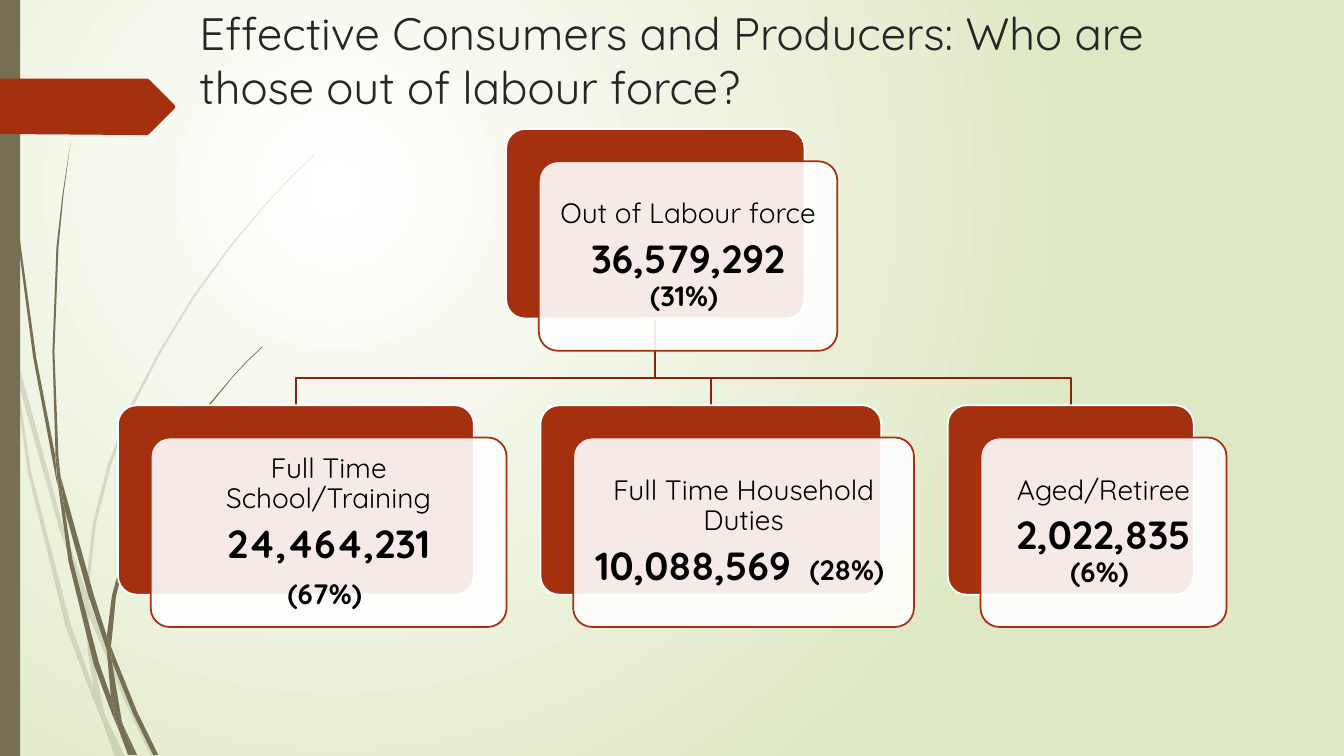
from lxml import etree
from pptx import Presentation, util as u
from pptx.dml.color import RGBColor
from pptx.enum import shapes, text
from pptx.oxml import ns

FONT = "Quicksand"
RUST, OLIVE, WHITE, BLACK = "A53010", "766F54", "FFFFFF", "000000"
CARD_HEIGHT, SHIFT_X, SHIFT_Y = 1.88, 0.325, 0.32
ROOT_TOP, BRANCH_TOP, RAIL = 1.28, 4.02, 3.75

FAINT_GRASS = [
    [(0.11, 3.5), (0.09, 3.22), (0, 2.82), (0, 2.99), (0.1, 3.44)],
    [(0.58, 5.22), (0.84, 5.99), (0.85, 5.86), (0.62, 5.2), (0.14, 3.45), (0.17, 3.76)],
    [(0.92, 6.07), (0.88, 5.96), (0.88, 6.1), (1.23, 6.94), (1.5, 7.51), (1.55, 7.51),
     (1.27, 6.92)],
    [(1.19, 7.51), (1.24, 7.51), (1.05, 7.11)],
    [(0.93, 6.83), (0.7, 6.19), (0.31, 4.69), (0.17, 3.76), (0.11, 3.5), (0.28, 4.7),
     (0.65, 6.21), (0.92, 6.93), (1.01, 7.14), (0.99, 7.07)],
    [(0.84, 5.99), (0.87, 6.46), (0.93, 6.83), (0.96, 6.92), (1.05, 7.11), (1.03, 7.06),
     (0.91, 6.46), (0.88, 6.1), (0.88, 6.08)],
    [(0.88, 5.84), (0.95, 5.2), (1.1, 4.62), (1.32, 4.04), (1.6, 3.49), (1.93, 2.95),
     (2.29, 2.45), (2.68, 1.98), (2.9, 1.75), (3.12, 1.54), (3.12, 1.53), (2.89, 1.75),
     (2.68, 1.97), (2.28, 2.44), (1.91, 2.94), (1.58, 3.48), (1.29, 4.03), (1.07, 4.61),
     (0.92, 5.2), (0.85, 5.84), (0.85, 5.86), (0.88, 5.96)],
    [(1.01, 7.14), (1.14, 7.51), (1.19, 7.51)],
    [(0.88, 6.08), (0.88, 6.1), (0.88, 5.96), (0.85, 5.86), (0.84, 5.99)],
    [(0.96, 6.92), (0.93, 6.83), (0.99, 7.07), (1.01, 7.14), (1.19, 7.51), (1.05, 7.11)],
]
SOLID_GRASS = [
    [(0.07, 1.1), (0.17, 2.33), (0.33, 3.55), (0.56, 4.77), (0.57, 4.81), (0.55, 4.57),
     (0.55, 4.53), (0.36, 3.55), (0.19, 2.32), (0.08, 1.09), (0.05, 0.48), (0.04, 0),
     (0.03, 0), (0.04, 0.48)],
    [(0.88, 5.92), (1.06, 6.45), (1.06, 6.33), (1.06, 6.31), (0.93, 5.9), (0.6, 4.72),
     (0.64, 5.05)],
    [(1.13, 6.49), (1.1, 6.41), (1.11, 6.56), (1.32, 7.08), (1.52, 7.49), (1.57, 7.49),
     (1.36, 7.06)],
    [(1.1, 6.91), (0.98, 6.57), (0.72, 5.56), (0.64, 5.05), (0.57, 4.77), (0.68, 5.57),
     (0.93, 6.59), (1.11, 7.08), (1.17, 7.22), (1.16, 7.17)],
    [(0.6, 4.72), (0.58, 4.53), (0.54, 3.49), (0.58, 2.45), (0.63, 1.93), (0.7, 1.41),
     (0.62, 1.93), (0.56, 2.45), (0.52, 3.49), (0.55, 4.49)],
    [(1.33, 7.49), (1.36, 7.49), (1.22, 7.19)],
    [(0.57, 4.77), (0.64, 5.05), (0.6, 4.72), (0.55, 4.49), (0.55, 4.53)],
    [(1.11, 6.33), (1.15, 5.92), (1.25, 5.52), (1.58, 4.76), (2.05, 4.06), (2.31, 3.74),
     (2.45, 3.59), (2.61, 3.44), (2.6, 3.44), (2.45, 3.58), (2.31, 3.73), (2.04, 4.05),
     (1.56, 4.74), (1.22, 5.51), (1.11, 5.91), (1.06, 6.31), (1.1, 6.41)],
    [(1.17, 7.22), (1.27, 7.49), (1.31, 7.49)],
    [(1.06, 6.45), (1.1, 6.91), (1.16, 7.06), (1.22, 7.19), (1.21, 7.16), (1.11, 6.56),
     (1.09, 6.51)],
    [(1.06, 6.45), (1.09, 6.51), (1.11, 6.56), (1.1, 6.41), (1.06, 6.31), (1.06, 6.33)],
    [(1.16, 7.06), (1.1, 6.91), (1.16, 7.17), (1.17, 7.22), (1.3, 7.49), (1.33, 7.49),
     (1.22, 7.19)],
]
ARROW = [(0, 0.78), (1.46, 0.78), (1.48, 0.79), (1.73, 1.04), (1.74, 1.06),
         (1.73, 1.08), (1.48, 1.33), (1.46, 1.34), (1.36, 1.34), (0, 1.33)]

ROOT = (5.02, 2.96, [[("Out of Labour force", 20, False)],
                     [("36,579,292 ", 28, True), ("(31%) ", 20, True)]])
BRANCHES = [
    (1.17, 3.53, [[("Full Time School/Training", 20, False)],
                  [("24,464,231", 28, True)], [("(67%) ", 20, True)]]),
    (5.36, 3.38, [[("Full Time Household Duties", 20, False)],
                  [("10,088,569 ", 28, True), (" (28%) ", 20, True)]]),
    (9.4, 2.44, [[("Aged/Retiree", 20, False)],
                 [("2,022,835 ", 28, True), ("(6%) ", 20, True)]]),
]


def color(value):
    return RGBColor.from_string(value)


def paint(shape, fill=None, line=None, alpha=100):
    shape.shadow.inherit = False
    if fill:
        shape.fill.solid()
        shape.fill.fore_color.rgb = color(fill)
        if alpha < 100:
            tint = shape._element.spPr.find(ns.qn("a:solidFill"))[0]
            etree.SubElement(tint, ns.qn("a:alpha"), val=str(alpha * 1000))
    else:
        shape.fill.background()
    if line:
        shape.line.color.rgb = color(line)
        shape.line.width = u.Pt(1.25)
    else:
        shape.line.fill.background()


def outline(page, points, close):
    corners = [(u.Inches(x), u.Inches(y)) for x, y in points]
    builder = page.shapes.build_freeform(*corners[0])
    builder.add_line_segments(corners[1:], close=close)
    return builder.convert_to_shape()


def add_background(page):
    fill = page.background.fill
    fill.gradient()
    for stop, value, position in zip(fill.gradient_stops, (WHITE, "DFE8C4"), (0, 1)):
        stop.color.rgb = color(value)
        stop.position = position
    gradient = next(page._element.iter(ns.qn("a:gradFill")))
    gradient.remove(gradient.find(ns.qn("a:lin")))
    focus = etree.SubElement(gradient, ns.qn("a:path"), path="circle")
    etree.SubElement(focus, ns.qn("a:fillToRect"),
                     l="50000", t="50000", r="100000", b="100000")


def add_decoration(page, height):
    for blades, alpha in ((FAINT_GRASS, 20), (SOLID_GRASS, 100)):
        for blade in blades:
            paint(outline(page, blade, True), OLIVE, alpha=alpha)
    stripe = page.shapes.add_shape(shapes.MSO_SHAPE.RECTANGLE, 0, 0, u.Inches(0.2), height)
    paint(stripe, OLIVE)
    paint(outline(page, ARROW, True), RUST)


def add_title(page, left, top, width, height):
    box = page.shapes.add_textbox(*map(u.Inches, (left, top, width, height)))
    frame = box.text_frame
    frame.word_wrap = True
    para = frame.paragraphs[0]
    para.text = "Effective Consumers and Producers: Who are those out of labour force?"
    para.font.name = FONT
    para.font.size = u.Pt(32.4)
    para.font.color.rgb = color("262626")


def add_panel(page, left, top, width):
    panel = page.shapes.add_shape(shapes.MSO_SHAPE.ROUNDED_RECTANGLE,
                                  *map(u.Inches, (left, top, width, CARD_HEIGHT)))
    panel.adjustments[0] = 0.1
    return panel


def add_card(page, left, top, width, lines):
    paint(add_panel(page, left, top, width), RUST, WHITE)
    card = add_panel(page, left + SHIFT_X, top + SHIFT_Y, width)
    paint(card, WHITE, RUST, alpha=90)
    frame = card.text_frame
    frame.word_wrap = True
    frame.vertical_anchor = text.MSO_ANCHOR.MIDDLE
    frame.margin_left = frame.margin_right = u.Inches(0.08)
    frame.margin_top = frame.margin_bottom = u.Inches(0.08)
    for index, spans in enumerate(lines):
        para = frame.add_paragraph() if index else frame.paragraphs[0]
        para.alignment = text.PP_ALIGN.CENTER
        para.line_spacing = 0.9
        para.space_after = u.Pt(0.35 * spans[0][1])
        para.font.name = FONT
        para.font.color.rgb = color(BLACK)
        for words, size, bold in spans:
            span = para.add_run()
            span.text = words
            span.font.name = FONT
            span.font.size = u.Pt(size)
            span.font.bold = bold
            span.font.color.rgb = color(BLACK)


def add_tree(page):
    left, width, lines = ROOT
    trunk = left + width / 2
    for branch_left, branch_width, _ in reversed(BRANCHES):
        end = branch_left + branch_width / 2
        elbow = [(trunk, ROOT_TOP + CARD_HEIGHT), (trunk, RAIL), (end, RAIL), (end, BRANCH_TOP)]
        paint(outline(page, elbow, False), line="84260D")
    add_card(page, left, ROOT_TOP, width, lines)
    for branch_left, branch_width, branch_lines in BRANCHES:
        add_card(page, branch_left, BRANCH_TOP, branch_width, branch_lines)


def main():
    deck = Presentation()
    deck.slide_width, deck.slide_height = u.Inches(13.33), u.Inches(7.5)
    page = deck.slides.add_slide(deck.slide_layouts[6])
    add_background(page)
    add_decoration(page, deck.slide_height)
    add_title(page, 1.88, 0, 10.63, 0.88)
    add_tree(page)
    deck.save("out.pptx")


if __name__ == "__main__":
    main()
